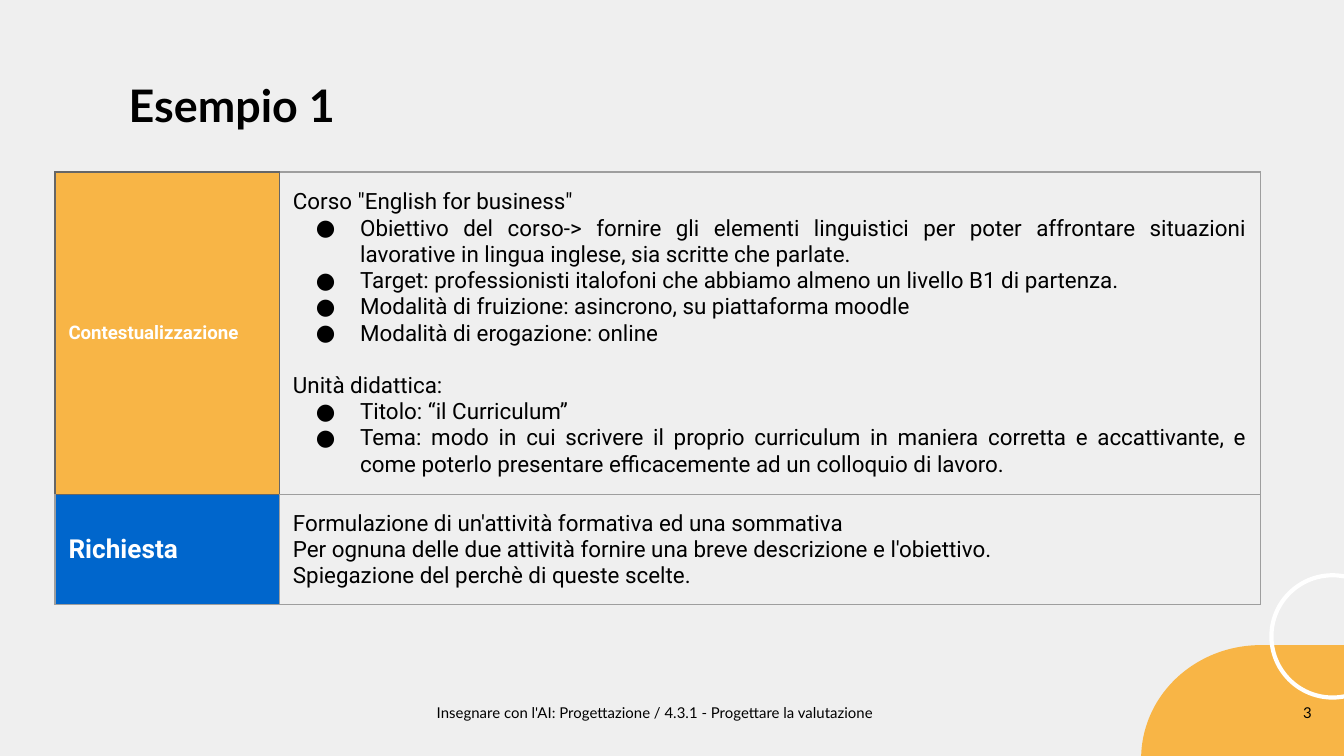
from lxml import etree
from pptx import Presentation
from pptx.dml.color import RGBColor
from pptx.enum.shapes import MSO_SHAPE as Preset
from pptx.enum.text import MSO_ANCHOR as Anchor, PP_ALIGN as Align
from pptx.oxml.ns import qn
from pptx.util import Inches, Pt

ORANGE, BLUE, WHITE, BLACK = "F8B546", "0066CC", "FFFFFF", "000000"
BACKGROUND, DARK_GREY, GREY = "EFEFEF", "666666", "9E9E9E"
TITLE_FONT, TABLE_FONT = "Lato", "Roboto"
BULLET = "●"

COURSE = [
    'Corso "English for business"',
    BULLET + "Obiettivo del corso-> fornire gli elementi linguistici per poter affrontare "
    "situazioni lavorative in lingua inglese, sia scritte che parlate.",
    BULLET + "Target: professionisti italofoni che abbiamo almeno un livello B1 di partenza.",
    BULLET + "Modalità di fruizione: asincrono, su piattaforma moodle",
    BULLET + "Modalità di erogazione: online",
    "Unità didattica:",
    BULLET + "Titolo: “il Curriculum”",
    BULLET + "Tema: modo in cui scrivere il proprio curriculum in maniera corretta e "
    "accattivante, e come poterlo presentare efficacemente ad un colloquio di lavoro.",
]
REQUEST = [
    "Formulazione di un'attività formativa ed una sommativa",
    "Per ognuna delle due attività fornire una breve descrizione e l'obiettivo.",
    "Spiegazione del perchè di queste scelte.",
]


def rgb(color):
    return RGBColor.from_string(color)


class SlideBuilder:
    def __init__(self, slide):
        self.slide = slide
        slide.background.fill.solid()
        slide.background.fill.fore_color.rgb = rgb(BACKGROUND)

    def style(self, paragraph, size, font, color=BLACK, bold=False, align=Align.LEFT):
        paragraph.alignment = align
        for run in paragraph.runs:
            run.font.size = Pt(size)
            run.font.name = font
            run.font.bold = bold
            run.font.color.rgb = rgb(color)

    def text(self, content, box, size, inset, bold=False, align=Align.LEFT):
        frame = self.slide.shapes.add_textbox(*map(Inches, box)).text_frame
        frame.word_wrap = True
        frame.margin_left = frame.margin_right = Inches(inset)
        frame.margin_top = frame.margin_bottom = Inches(inset)
        frame.text = content
        self.style(frame.paragraphs[0], size, TITLE_FONT, bold=bold, align=align)

    def shape(self, preset, box, rotation, fill=None, line=None):
        shape = self.slide.shapes.add_shape(preset, *map(Inches, box))
        shape.rotation = rotation
        shape.shadow.inherit = False
        if fill:
            shape.fill.solid()
            shape.fill.fore_color.rgb = rgb(fill)
        else:
            shape.fill.background()
        if line:
            shape.line.color.rgb = rgb(line)
            shape.line.width = Pt(2.25)
        else:
            shape.line.fill.background()

    def table(self, left, top, widths, heights):
        table = self.slide.shapes.add_table(
            len(heights), len(widths), Inches(left), Inches(top),
            Inches(sum(widths)), Inches(sum(heights))).table
        table.first_row = table.horz_banding = False
        for column, width in zip(table.columns, widths):
            column.width = Inches(width)
        for row, height in zip(table.rows, heights):
            row.height = Inches(height)
        return table

    def borders(self, cell, **colors):
        """Draw thin borders; colors maps the sides L, R, T and B to hex strings."""
        properties = cell._tc.get_or_add_tcPr()
        for position, side in enumerate("LRTB"):
            line = etree.Element(qn("a:ln" + side), w=str(Pt(0.75)))
            fill = etree.SubElement(line, qn("a:solidFill"))
            etree.SubElement(fill, qn("a:srgbClr"), val=colors.get(side, GREY))
            properties.insert(position, line)

    def bullet(self, paragraph):
        properties = paragraph._p.get_or_add_pPr()
        properties.set("marL", str(Inches(0.5)))
        properties.set("indent", str(Inches(-0.33)))
        color = etree.SubElement(properties, qn("a:buClr"))
        etree.SubElement(color, qn("a:srgbClr"), val=BLACK)
        etree.SubElement(properties, qn("a:buFont"), typeface=TABLE_FONT)
        etree.SubElement(properties, qn("a:buChar"), char=BULLET)

    def cell(self, cell, lines, size, fill=None, color=BLACK, bold=False, align=Align.LEFT):
        """Fill a cell; a line that starts with the bullet sign becomes a list item."""
        cell.vertical_anchor = Anchor.MIDDLE
        cell.margin_left = cell.margin_right = Inches(0.1)
        cell.margin_top = cell.margin_bottom = Inches(0.1)
        if fill:
            cell.fill.solid()
            cell.fill.fore_color.rgb = rgb(fill)
        else:
            cell.fill.background()
        cell.text_frame.text = "\n".join(line.removeprefix(BULLET) for line in lines)
        for index, (line, paragraph) in enumerate(zip(lines, cell.text_frame.paragraphs)):
            if line.startswith(BULLET):
                self.bullet(paragraph)
            elif index and lines[index - 1].startswith(BULLET):
                paragraph.space_before = Pt(14)
            self.style(paragraph, size, TABLE_FONT, color, bold, align)


def main():
    deck = Presentation()
    deck.slide_width = Inches(10)
    deck.slide_height = deck.slide_width * 9 // 16
    builder = SlideBuilder(deck.slides.add_slide(deck.slide_layouts[6]))

    builder.text("Insegnare con l'AI: Progettazione / 4.3.1 - Progettare la valutazione",
                 (0.38, 5.17, 8.99, 0.29), 8, 0.07, align=Align.CENTER)
    builder.shape(Preset.FLOWCHART_DELAY, (8.49, 4.8, 1.78, 1.69), 180, fill=ORANGE)
    builder.shape(Preset.OVAL, (9.46, 4.28, 0.91, 0.91), 270, line=WHITE)
    builder.text("3", (9.22, 5.17, 0.61, 0.46), 8, 0.07, align=Align.RIGHT)

    plan = builder.table(0.41, 1.28, (1.67, 7.3), (2.4, 0.82))
    context, course = plan.cell(0, 0), plan.cell(0, 1)
    request, details = plan.cell(1, 0), plan.cell(1, 1)
    builder.cell(context, ["Contestualizzazione"], 10, ORANGE, WHITE, bold=True)
    builder.cell(course, COURSE, 12, align=Align.JUSTIFY)
    builder.cell(request, ["Richiesta"], 14, BLUE, WHITE, bold=True)
    builder.cell(details, REQUEST, 12, align=Align.JUSTIFY)
    builder.borders(context, **dict.fromkeys("LRTB", DARK_GREY))
    builder.borders(course, L=DARK_GREY)
    builder.borders(request, T=DARK_GREY)
    builder.borders(details)

    builder.text("Esempio 1", (0.86, 0.48, 4.96, 0.58), 24, 0.1, bold=True)
    deck.save("out.pptx")


if __name__ == "__main__":
    main()
